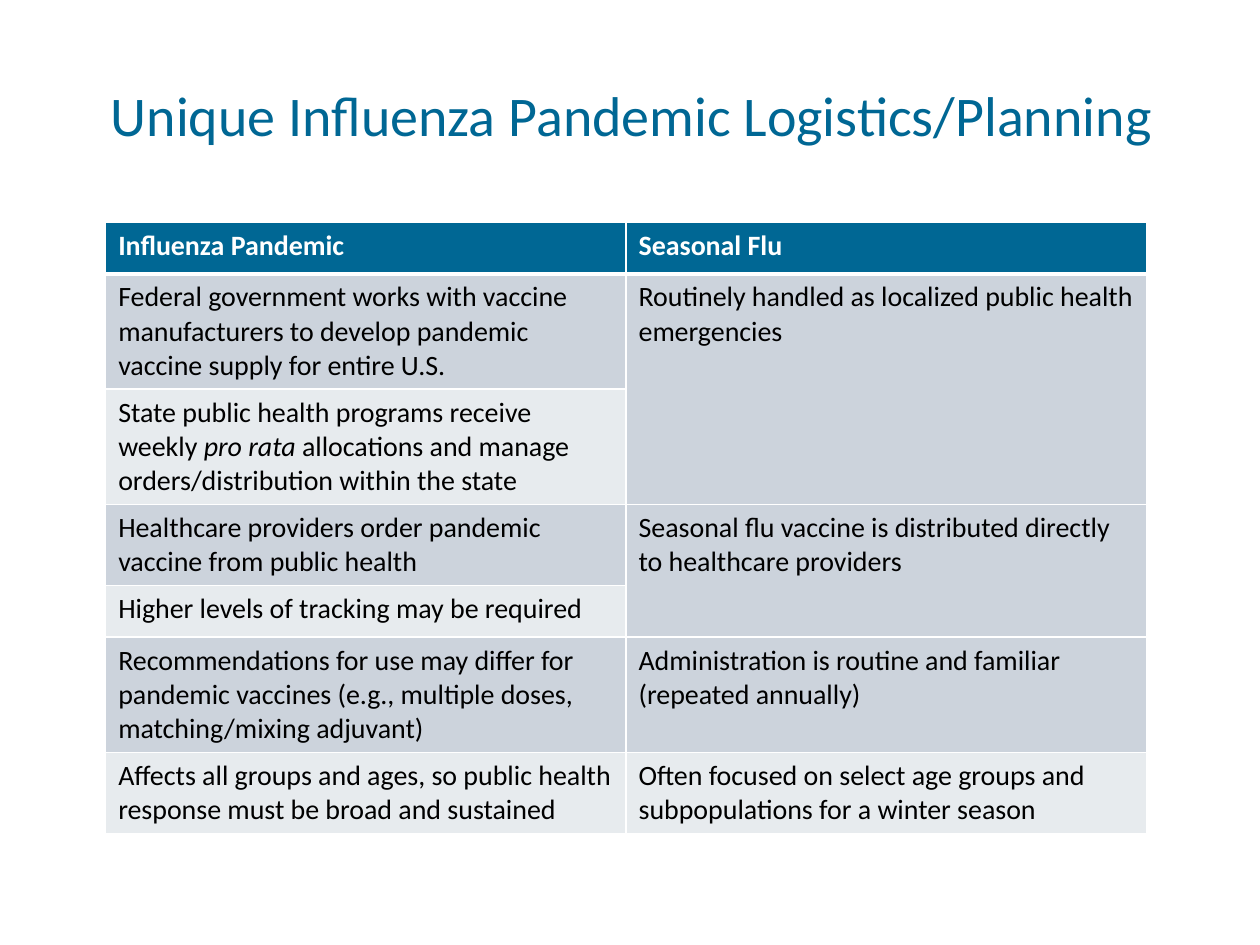
from dataclasses import dataclass

from lxml.etree import SubElement
from pptx import Presentation
from pptx.dml.color import RGBColor
from pptx.enum.text import MSO_ANCHOR, MSO_AUTO_SIZE, PP_ALIGN
from pptx.oxml.ns import qn
from pptx.util import Cm, Pt


@dataclass(frozen=True)
class Theme:
    font: str = "Calibri"
    title_size: int = 32
    table_size: int = 16
    accent: str = "006794"
    text: str = "000000"
    white: str = "FFFFFF"
    dark_band: str = "CCD3DC"
    light_band: str = "E7EBEE"
    thin_rule: int = 1
    header_rule: int = 3


THEME = Theme()
TITLE = "Unique Influenza Pandemic Logistics/Planning"
ROWS = [
    ("Influenza Pandemic", "Seasonal Flu"),
    ("Federal government works with vaccine manufacturers to develop pandemic vaccine supply for entire U.S.",
     "Routinely handled as localized public health emergencies"),
    (("State public health programs receive weekly ", "pro rata ",
      "allocations and manage orders/distribution within the state"), None),
    ("Healthcare providers order pandemic vaccine from public health",
     "Seasonal flu vaccine is distributed directly to healthcare providers"),
    ("Higher levels of tracking may be required", None),
    ("Recommendations for use may differ for pandemic vaccines (e.g., multiple doses, matching/mixing adjuvant)",
     "Administration is routine and familiar (repeated annually)"),
    ("Affects all groups and ages, so public health response must be broad and sustained",
     "Often focused on select age groups and subpopulations for a winter season"),
]
ITALIC_SPANS = {"pro rata "}


def style_font(font, size, color, bold=False):
    font.name = THEME.font
    font.size = Pt(size)
    font.bold = bold
    font.color.rgb = RGBColor.from_string(color)


def set_title(page):
    box = page.shapes.title
    box.left, box.top, box.width, box.height = Cm(1.98), Cm(1.65), Cm(21.9), Cm(2.87)
    frame = box.text_frame
    frame.text = TITLE
    frame.word_wrap = True
    frame.auto_size = MSO_AUTO_SIZE.NONE
    frame.vertical_anchor = MSO_ANCHOR.TOP
    para = frame.paragraphs[0]
    para.alignment = PP_ALIGN.LEFT
    para.line_spacing = 0.9
    style_font(para.runs[0].font, THEME.title_size, THEME.accent)


def set_borders(cell, row):
    widths = {
        "L": THEME.thin_rule,
        "R": THEME.thin_rule,
        "T": THEME.header_rule if row == 1 else THEME.thin_rule,
        "B": THEME.header_rule if row == 0 else THEME.thin_rule,
    }
    properties = cell._tc.get_or_add_tcPr()
    for side, width in widths.items():
        line = SubElement(properties, qn(f"a:ln{side}"), w=str(Pt(width)))
        fill = SubElement(line, qn("a:solidFill"))
        SubElement(fill, qn("a:srgbClr"), val=THEME.white)


def set_cell_text(cell, content, is_header):
    para = cell.text_frame.paragraphs[0]
    for text in (content,) if isinstance(content, str) else content:
        span = para.add_run()
        span.text = text
        style_font(span.font, THEME.table_size, THEME.white if is_header else THEME.text, is_header)
        span.font.italic = text in ITALIC_SPANS


def band_color(row):
    if row == 0:
        return THEME.accent
    return THEME.dark_band if row % 2 else THEME.light_band


def add_comparison_table(page):
    box = page.shapes.add_table(len(ROWS), 2, Cm(2.13), Cm(4.48), Cm(20.98), Cm(12.14))
    table = box.table
    for row, contents in enumerate(ROWS):
        table.rows[row].height = Cm(1.04)
        for column, content in enumerate(contents):
            cell = table.cell(row, column)
            set_borders(cell, row)
            cell.fill.solid()
            cell.fill.fore_color.rgb = RGBColor.from_string(band_color(row))
            if content is None:
                table.cell(row - 1, column).merge(cell)
            else:
                set_cell_text(cell, content, row == 0)
    box.height = Cm(12.14)


def main():
    deck = Presentation()
    deck.slide_width, deck.slide_height = Cm(25.4), Cm(19.05)
    page = deck.slides.add_slide(deck.slide_layouts[5])
    set_title(page)
    add_comparison_table(page)
    deck.save("out.pptx")


if __name__ == "__main__":
    main()
